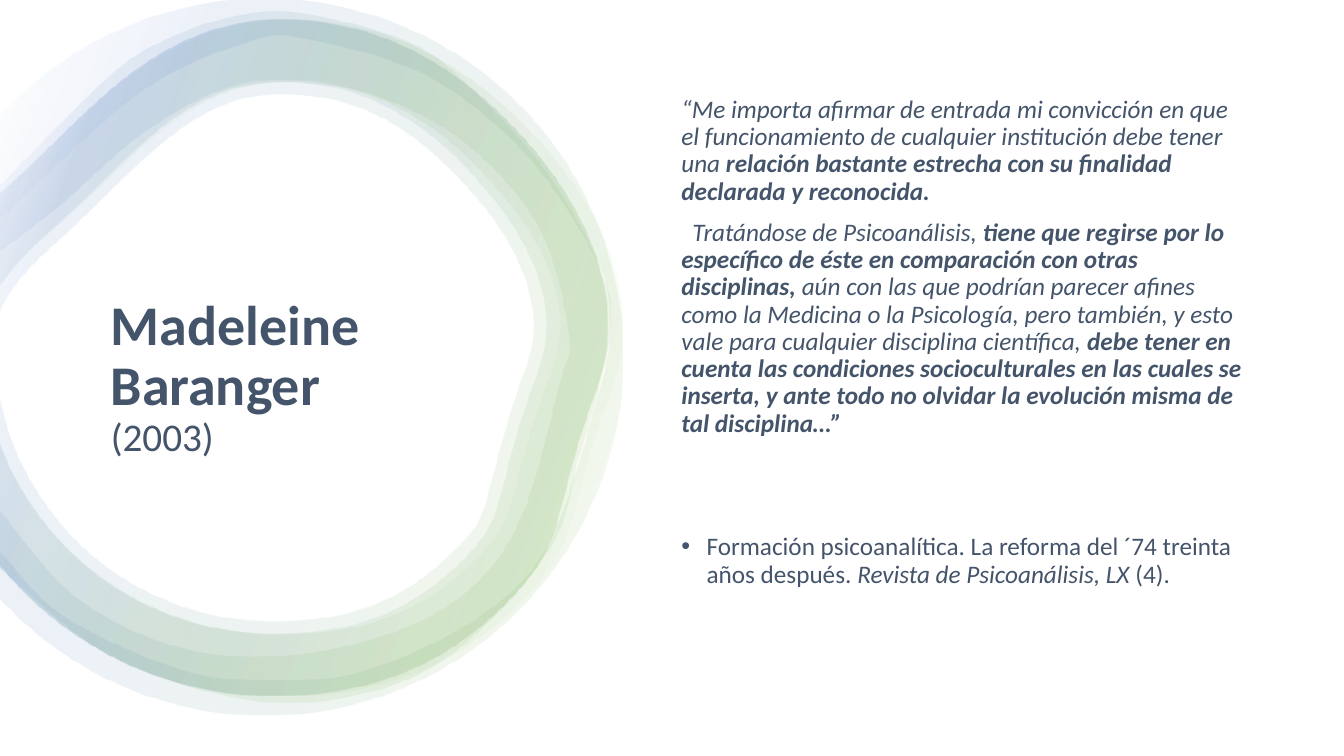
import math

from lxml import etree
from pptx import Presentation
from pptx.dml.color import RGBColor
from pptx.enum import text
from pptx.oxml import ns
from pptx.util import Inches, Pt

COLORS = {"white": "FFFFFF", "green": "70AD47", "blue": "4472C4", "slate": "44546A"}
FONT = "Calibri"

# Runs: (words, size, bold, italic)
TITLE_LINES = [("Madeleine Baranger", 40, True, False), ("(2003)", 28, False, False)]
QUOTE_START = [
    ("“Me importa afirmar de entrada mi convicción en que el funcionamiento de cualquier "
     "institución debe tener una ", 18, False, True),
    ("relación bastante estrecha con su finalidad declarada y reconocida.", 18, True, True),
]
QUOTE_END = [
    ("Tratándose de Psicoanálisis, ", 18, False, True),
    ("tiene que regirse por lo específico de éste en comparación con otras disciplinas,",
     18, True, True),
    (" aún con las que podrían parecer afines como la Medicina o la Psicología, pero también, "
     "y esto vale para cualquier disciplina científica, ", 18, False, True),
    ("debe tener en cuenta las condiciones socioculturales en las cuales se inserta, y ante "
     "todo no olvidar la evolución misma de tal disciplina…”", 18, True, True),
]
REFERENCE = [
    ("Formación psicoanalítica. La reforma del ´74 treinta años después. ", 18, False, False),
    ("Revista de Psicoanálisis, LX", 18, False, True),
    (" (4).", 18, False, False),
]
# Paragraphs: (runs, space before, left margin, first-line indent, bullet)
BODY = [
    (QUOTE_START, 0, 0, 0, None),
    (QUOTE_END, 10, 0, 0.11, None),
    (REFERENCE, 69, 0.25, -0.25, "•"),
]

# Edges, in inches: outer ones run clockwise from the slide's left side, inner ones back
NARROW_OUTER = [
    (-0.01, 1.85), (1.08, 0.76), (1.65, 0.39), (2.33, 0.16), (3.04, 0.14), (4.12, 0.45),
    (4.83, 1.04), (5.46, 1.78), (5.93, 2.64), (6.04, 3.3), (5.73, 4.54), (5.44, 5.44),
    (4.55, 6.42), (3.65, 6.86), (2.5, 6.94), (1.1, 6.5), (-0.01, 5.62)]
NARROW_INNER = [
    (-0.01, 5.04), (0.75, 5.91), (1.8, 6.42), (2.96, 6.48), (4.06, 6.2), (4.77, 5.72),
    (5.2, 5.02), (5.53, 3.83), (5.63, 3.3), (5.32, 2.23), (4.54, 1.37), (3.52, 0.89),
    (2.45, 0.82), (1.49, 1.27), (0.57, 2.06), (-0.01, 2.5)]
ROUND_INNER = [
    (-0.01, 5.45), (0.62, 6.1), (1.78, 6.63), (2.72, 6.74), (3.65, 6.63), (4.77, 6.09),
    (5.45, 5.34), (5.93, 3.86), (6.04, 3.23), (5.91, 2.6), (5.21, 1.54), (4.23, 0.76),
    (3.07, 0.4), (2.46, 0.42), (1.37, 0.93), (-0.01, 2.18)]
# Cubic curves: a start, then two handles and an end for each stretch
WIDE_OUTER = [
    (-0.01, 1.93), (0.23, 1.71), (0.39, 1.56), (0.55, 1.4), (1.18, 0.77), (1.82, 0.19),
    (2.78, 0.19), (3.83, 0.19), (4.61, 0.7), (5.25, 1.43), (5.78, 2.05), (6.25, 2.94),
    (5.91, 3.87), (5.45, 5.11), (5.65, 5.35), (5.02, 5.98), (4.39, 6.61), (3.67, 6.9),
    (2.7, 6.9), (1.75, 6.9), (0.89, 6.51), (0.26, 5.89), (0.18, 5.81), (0.08, 5.7),
    (-0.01, 5.59)]
WIDE_INNER = [
    (-0.01, 4.35), (0.01, 4.41), (0.04, 4.48), (0.06, 4.54), (0.21, 4.88), (0.42, 5.19),
    (0.69, 5.46), (1.23, 5.99), (1.94, 6.28), (2.7, 6.28), (3.11, 6.28), (3.46, 6.23),
    (3.76, 6.11), (4.06, 5.99), (4.33, 5.81), (4.59, 5.55), (4.77, 5.37), (4.83, 5.26),
    (4.87, 5.18), (4.92, 5.07), (4.96, 4.93), (5.01, 4.73), (5.07, 4.48), (5.16, 4.13),
    (5.34, 3.66), (5.44, 3.37), (5.44, 3.06), (5.33, 2.73), (5.23, 2.44), (5.04, 2.13),
    (4.78, 1.84), (4.49, 1.49), (4.19, 1.25), (3.88, 1.08), (3.54, 0.89), (3.18, 0.81),
    (2.78, 0.81), (2.46, 0.81), (2.17, 0.89), (1.86, 1.08), (1.55, 1.27), (1.26, 1.56),
    (0.98, 1.84), (0.85, 1.97), (0.73, 2.08), (0.6, 2.2), (0.36, 2.41), (0.16, 2.6),
    (-0.01, 2.85)]
THICK_INNER = [
    (-0.01, 3.84), (0.02, 4.06), (0.09, 4.3), (0.17, 4.49), (0.32, 4.82), (0.52, 5.12),
    (0.77, 5.37), (1.29, 5.88), (1.98, 6.16), (2.71, 6.16), (3.48, 6.16), (4.01, 5.95),
    (4.5, 5.46), (4.67, 5.3), (4.73, 5.2), (4.76, 5.13), (4.81, 5.03), (4.84, 4.89),
    (4.89, 4.7), (4.96, 4.45), (5.04, 4.1), (5.22, 3.62), (5.32, 3.35), (5.31, 3.08),
    (5.21, 2.77), (5.11, 2.49), (4.94, 2.2), (4.69, 1.92), (4.4, 1.59), (4.12, 1.35),
    (3.82, 1.18), (3.5, 1.01), (3.16, 0.93), (2.78, 0.93), (2.12, 0.93), (1.65, 1.34),
    (1.07, 1.92), (0.94, 2.05), (0.81, 2.17), (0.69, 2.29), (0.45, 2.5), (0.25, 2.68),
    (0.12, 2.88), (0.06, 2.96), (0.02, 3.04), (-0.01, 3.14)]
CIRCLE_CENTER, CIRCLE_RADIUS = (2.62, 3.54), 3.55
CIRCLE_REACH, CIRCLE_STRETCHES = 138, 4


def smooth(points):
    """Cubic curves that pass through all the given points."""
    padded = [points[0], *points, points[-1]]
    knots = [points[0]]
    for before, start, end, after in zip(padded, padded[1:], padded[2:], padded[3:]):
        knots += [tuple(s + (e - b) / 6 for b, s, e in zip(before, start, end)),
                  tuple(e - (a - s) / 6 for s, e, a in zip(start, end, after)), end]
    return knots


def circle_arc():
    """Cubic curves along the circle, open towards the left."""
    turn = math.radians(2 * CIRCLE_REACH / CIRCLE_STRETCHES)
    pull = 4 / 3 * math.tan(turn / 4)

    def point(angle, shift=0):
        return (CIRCLE_CENTER[0] + CIRCLE_RADIUS * (math.cos(angle) - shift * math.sin(angle)),
                CIRCLE_CENTER[1] + CIRCLE_RADIUS * (math.sin(angle) + shift * math.cos(angle)))

    angle = -math.radians(CIRCLE_REACH)
    knots = [point(angle)]
    for _ in range(CIRCLE_STRETCHES):
        knots += [point(angle, pull), point(angle + turn, -pull), point(angle + turn)]
        angle += turn
    return knots


def widen(points):
    return [(x * 1.025, y) for x, y in points]


def bend(lines):
    """Turn each three straight segments into one cubic curve."""
    for first in range(0, len(lines), 3):
        curve = etree.Element(ns.qn("a:cubicBezTo"))
        lines[first].addprevious(curve)
        for line in lines[first:first + 3]:
            curve.append(line[0])
            line.getparent().remove(line)


def add_ring(shapes, outer, inner, stops):
    vertices = [(Inches(x), Inches(y)) for x, y in outer + inner]
    builder = shapes.build_freeform(*vertices[0])
    builder.add_line_segments(vertices[1:], close=True)
    ring = builder.convert_to_shape()
    ring.shadow.inherit = False
    ring.line.fill.background()
    ring.fill.background()
    properties = ring.element.spPr
    lines = list(properties.iter(ns.qn("a:lnTo")))
    bend(lines[:len(outer) - 1])
    bend(lines[len(outer):len(vertices) - 1])
    gradient = etree.Element(ns.qn("a:gradFill"), rotWithShape="1")
    stop_list = etree.SubElement(gradient, ns.qn("a:gsLst"))
    for position, color in stops:
        stop = etree.SubElement(stop_list, ns.qn("a:gs"), pos=str(position * 1000))
        tint = etree.SubElement(stop, ns.qn("a:srgbClr"), val=COLORS[color])
        etree.SubElement(tint, ns.qn("a:alpha"), val="10000")
    etree.SubElement(gradient, ns.qn("a:lin"), ang=str(200 * 60000), scaled="0")
    properties.replace(properties.find(ns.qn("a:noFill")), gradient)


def add_text_frame(slide, left, top, width, height, anchor, top_margin):
    box = slide.shapes.add_textbox(Inches(left), Inches(top), Inches(width), Inches(height))
    frame = box.text_frame
    frame.word_wrap = True
    frame.vertical_anchor = anchor
    frame.margin_top = Inches(top_margin)
    return frame


def add_run(paragraph, words, size, bold, italic):
    run = paragraph.add_run()
    run.text = words
    font = run.font
    font.name, font.size, font.bold, font.italic = FONT, Pt(size), bold, italic
    font.color.rgb = RGBColor.from_string(COLORS["slate"])


presentation = Presentation()
presentation.slide_width, presentation.slide_height = Inches(13.33), Inches(7.5)
slide = presentation.slides.add_slide(presentation.slide_layouts[6])
slide.background.fill.solid()
slide.background.fill.fore_color.rgb = RGBColor.from_string(COLORS["white"])

green_to_blue = [(2, "white"), (16, "green"), (85, "blue"), (100, "white")]
rings = [
    (smooth(NARROW_OUTER), smooth(NARROW_INNER), [(37, "green"), (85, "blue"), (100, "white")]),
    (widen(WIDE_OUTER), widen(WIDE_INNER), [(2, "white"), (54, "green"), (100, "white")]),
    (WIDE_OUTER, THICK_INNER, green_to_blue),
    (WIDE_OUTER, WIDE_INNER, green_to_blue),
    (circle_arc(), smooth(ROUND_INNER),
     [(2, "white"), (16, "green"), (74, "blue"), (100, "white")]),
]
ring_group = slide.shapes.add_group_shape()
for ring in rings:
    add_ring(ring_group.shapes, *ring)

title = add_text_frame(slide, 1, 1.94, 4.01, 3.02, text.MSO_ANCHOR.MIDDLE, 0.66).paragraphs[0]
title.line_spacing = 0.9
for number, line in enumerate(TITLE_LINES):
    if number:
        title.add_line_break()
    add_run(title, *line)

body = add_text_frame(slide, 6.66, 0.88, 5.8, 5.72, text.MSO_ANCHOR.TOP, 0.08)
for number, (runs, space, margin, indent, bullet) in enumerate(BODY):
    paragraph = body.add_paragraph() if number else body.paragraphs[0]
    paragraph.line_spacing, paragraph.space_before = 0.9, Pt(space)
    properties = paragraph._p.get_or_add_pPr()
    properties.set("marL", str(Inches(margin)))
    properties.set("indent", str(Inches(indent)))
    if bullet:
        etree.SubElement(properties, ns.qn("a:buFont"), typeface="Arial")
        etree.SubElement(properties, ns.qn("a:buChar"), char=bullet)
    for run in runs:
        add_run(paragraph, *run)

presentation.save("out.pptx")
